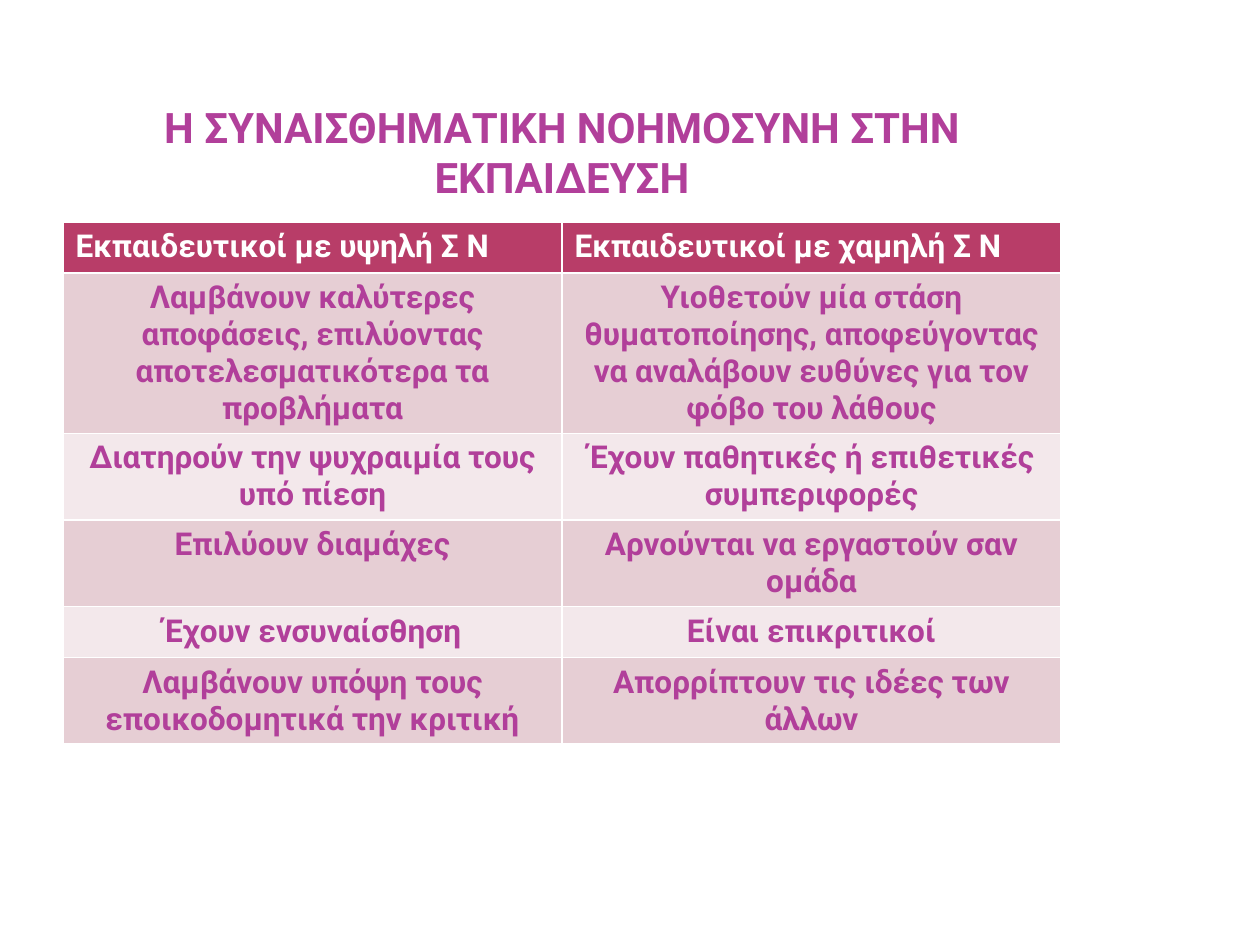
"""Build a slide comparing teachers with high and low emotional intelligence."""
from pptx import Presentation
from pptx.dml.color import RGBColor
from pptx.enum.text import MSO_ANCHOR, PP_ALIGN

PX = 914400 / 126
CENTER, LEFT = PP_ALIGN.CENTER, PP_ALIGN.LEFT
BOTTOM = MSO_ANCHOR.BOTTOM
PLUM, WHITE, ROSE = "B13F9A", "FFFFFF", "B83D68"
BANDS = ["F3E8EB", "E6CED4"]
ROWS = [
    ("Εκπαιδευτικοί με υψηλή Σ Ν", "Εκπαιδευτικοί με χαμηλή Σ Ν"),
    ("Λαμβάνουν καλύτερες αποφάσεις, επιλύοντας αποτελεσματικότερα τα προβλήματα",
     "Υιοθετούν μία στάση θυματοποίησης, αποφεύγοντας να αναλάβουν ευθύνες για τον φόβο του λάθους"),
    ("Διατηρούν την ψυχραιμία τους υπό πίεση",
     "Έχουν παθητικές ή επιθετικές συμπεριφορές"),
    ("Επιλύουν διαμάχες", "Αρνούνται να εργαστούν σαν ομάδα"),
    ("Έχουν ενσυναίσθηση", "Είναι επικριτικοί"),
    ("Λαμβάνουν υπόψη τους εποικοδομητικά την κριτική",
     "Απορρίπτουν τις ιδέες των άλλων"),
]


def px(*sizes):
    return [round(size * PX) for size in sizes]


def write(frame, text, size, color, align):
    frame.text = text
    para = frame.paragraphs[0]
    para.alignment = align
    font = para.runs[0].font
    for name, value in {"name": "Roboto", "size": size * 12700, "bold": True}.items():
        setattr(font, name, value)
    font.color.rgb = RGBColor.from_string(color)


deck = Presentation()
deck.slide_width, deck.slide_height = px(1260, 945)
slide = deck.slides.add_slide(deck.slide_layouts[5])

title = slide.shapes.title
title.left, title.top, title.width, title.height = px(63, 44, 998, 158)
frame = title.text_frame
margins = dict(zip(["margin_left", "margin_top", "margin_right", "margin_bottom"],
                   px(6, 0, 6, 0)))
for name, value in {**margins, "word_wrap": True, "vertical_anchor": BOTTOM}.items():
    setattr(frame, name, value)
write(frame, "Η ΣΥΝΑΙΣΘΗΜΑΤΙΚΗ ΝΟΗΜΟΣΥΝΗ ΣΤΗΝ ΕΚΠΑΙΔΕΥΣΗ", 24, PLUM, CENTER)

table = slide.shapes.add_table(len(ROWS), 2, *px(63, 222, 998, 51 * len(ROWS))).table
for r, texts in enumerate(ROWS):
    head = r == 0
    fill = ROSE if head else BANDS[r % 2]
    for c, text in enumerate(texts):
        cell = table.cell(r, c)
        cell.fill.solid()
        cell.fill.fore_color.rgb = RGBColor.from_string(fill)
        write(cell.text_frame, text, 18, WHITE if head else PLUM, LEFT if head else CENTER)

deck.save("out.pptx")
